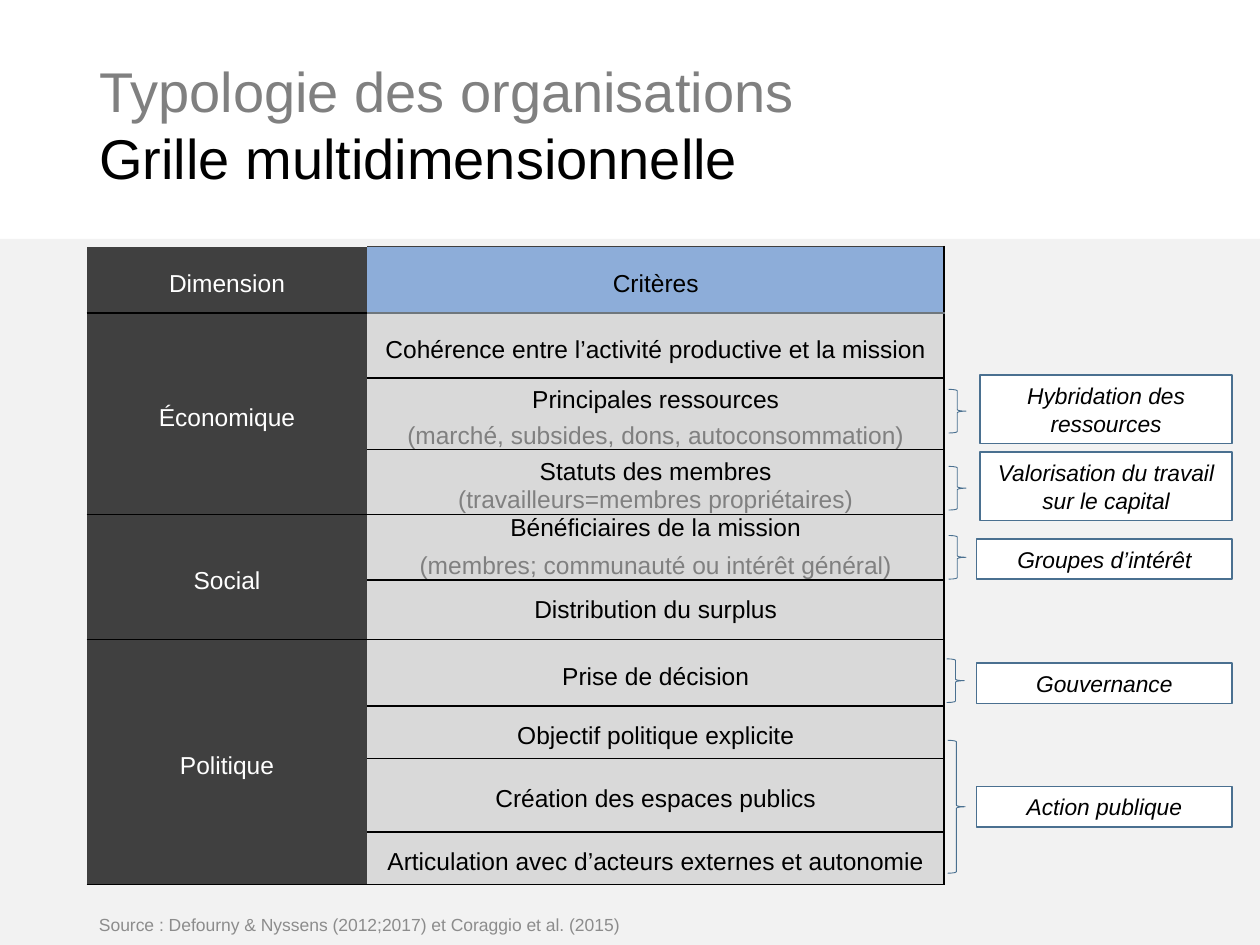
from dataclasses import dataclass

from lxml import etree
from pptx import Presentation
from pptx.dml.color import RGBColor
from pptx.enum.shapes import MSO_SHAPE
from pptx.enum.text import MSO_ANCHOR, PP_ALIGN
from pptx.oxml.ns import qn
from pptx.util import Pt


@dataclass(frozen=True)
class Theme:
    font: str = "Arial"
    black: str = "000000"
    white: str = "FFFFFF"
    muted: str = "808080"
    source: str = "8C8C8C"
    panel: str = "F2F2F2"
    dark: str = "404040"
    header: str = "8DADD9"
    header_rule: str = "6F777D"
    criterion: str = "D9D9D9"
    accent: str = "4A7090"
    title_size: float = 32
    table_size: float = 14
    label_size: float = 13
    source_size: float = 10


@dataclass(frozen=True)
class Box:
    left: float
    top: float
    width: float
    height: float

    def points(self):
        return Pt(self.left), Pt(self.top), Pt(self.width), Pt(self.height)


@dataclass(frozen=True)
class Criterion:
    text: str
    height: float
    spacing: float = 1.3
    detail: str = ""
    detail_spacing: float = 1.0
    detail_gap: float = 0


THEME = Theme()
HEADER_HEIGHT = 38
DIMENSIONS = {
    "Économique": [
        Criterion("Cohérence entre l’activité productive et la mission", 37),
        Criterion("Principales ressources", 41, detail_spacing=1.3,
                  detail="(marché, subsides, dons, autoconsommation)"),
        Criterion("Statuts des membres", 37,
                  detail="(travailleurs=membres propriétaires)"),
    ],
    "Social": [
        Criterion("Bénéficiaires de la mission", 37, 1.0, detail_gap=6,
                  detail="(membres; communauté ou intérêt général)"),
        Criterion("Distribution du surplus", 34, 1.0),
    ],
    "Politique": [
        Criterion("Prise de décision", 38),
        Criterion("Objectif politique explicite", 30),
        Criterion("Création des espaces publics", 42),
        Criterion("Articulation avec d’acteurs externes et autonomie", 30),
    ],
}
# Label, label box, brace box
CONCEPTS = [
    ("Hybridation des ressources", Box(560, 214.5, 144, 39), Box(542, 222.5, 10, 25)),
    ("Valorisation du travail sur le capital", Box(560, 258.5, 144, 39), Box(542, 266.5, 10, 25)),
    ("Groupes d’intérêt", Box(558, 308, 146, 23), Box(542, 306, 10, 25)),
    ("Gouvernance", Box(558, 379, 146, 23), Box(541, 376.5, 10, 25)),
    ("Action publique", Box(558, 449.5, 146, 23), Box(541.5, 423, 10, 76)),
]


def rgb(color):
    return RGBColor.from_string(color)


def style_font(font, size, color, italic=False):
    font.name = THEME.font
    font.size = Pt(size)
    font.color.rgb = rgb(color)
    font.italic = italic


def add_panel(page, box):
    panel = page.shapes.add_shape(MSO_SHAPE.RECTANGLE, *box.points())
    panel.shadow.inherit = False
    panel.fill.solid()
    panel.fill.fore_color.rgb = rgb(THEME.panel)
    panel.line.fill.background()


def place_title(page, box, topic, heading):
    title = page.shapes.title
    title.left, title.top, title.width, title.height = box.points()
    frame = title.text_frame
    frame.vertical_anchor = MSO_ANCHOR.MIDDLE
    para = frame.paragraphs[0]
    para.alignment = PP_ALIGN.LEFT
    for text, color in ((topic, THEME.muted), (heading, THEME.black)):
        if para.runs:
            para.add_line_break()
        span = para.add_run()
        span.text = text
        style_font(span.font, THEME.title_size, color)


def set_borders(cell, **edges):
    """Draw the named edges (L, R, T, B) in their colours and clear the others."""
    properties = cell._tc.get_or_add_tcPr()
    for index, edge in enumerate("LRTB"):
        line = etree.Element(qn(f"a:ln{edge}"), w=str(Pt(1)))
        if edges.get(edge):
            fill = etree.SubElement(line, qn("a:solidFill"))
            etree.SubElement(fill, qn("a:srgbClr"), val=edges[edge])
        else:
            etree.SubElement(line, qn("a:noFill"))
        properties.insert(index, line)


def paint_cell(cell, fill):
    cell.fill.solid()
    cell.fill.fore_color.rgb = rgb(fill)
    cell.vertical_anchor = MSO_ANCHOR.MIDDLE
    cell.margin_left = cell.margin_right = Pt(3)
    cell.margin_top = cell.margin_bottom = 0


def write_cell_line(para, text, color, spacing=1.3, gap=0):
    para.text = text
    para.alignment = PP_ALIGN.CENTER
    para.line_spacing = spacing
    if gap:
        para.space_before = Pt(gap)
    style_font(para.font, THEME.table_size, color)


def fill_criterion(cell, criterion, top_rule):
    paint_cell(cell, THEME.criterion)
    set_borders(cell, T=top_rule, R=THEME.black, B=THEME.black)
    frame = cell.text_frame
    write_cell_line(frame.paragraphs[0], criterion.text, THEME.black, criterion.spacing)
    if criterion.detail:
        write_cell_line(frame.add_paragraph(), criterion.detail, THEME.muted,
                        criterion.detail_spacing, criterion.detail_gap)


def add_grid(page, box, first_width):
    criteria = [item for group in DIMENSIONS.values() for item in group]
    grid = page.shapes.add_table(len(criteria) + 1, 2, *box.points()).table
    grid.columns[0].width = Pt(first_width)
    grid.columns[1].width = Pt(box.width - first_width)
    heights = [HEADER_HEIGHT] + [item.height for item in criteria]
    for row, height in zip(grid.rows, heights):
        row.height = Pt(height)

    for column, (text, fill, color) in enumerate((
            ("Dimension", THEME.dark, THEME.white),
            ("Critères", THEME.header, THEME.black))):
        cell = grid.cell(0, column)
        paint_cell(cell, fill)
        write_cell_line(cell.text_frame.paragraphs[0], text, color)
    set_borders(grid.cell(0, 0), B=THEME.black)
    set_borders(grid.cell(0, 1), T=THEME.dark, R=THEME.black, B=THEME.header_rule)

    first = 1
    for dimension, group in DIMENSIONS.items():
        last = first + len(group) - 1
        for row, criterion in enumerate(group, first):
            paint_cell(grid.cell(row, 0), THEME.dark)
            set_borders(grid.cell(row, 0),
                        T=THEME.black if row == first else None,
                        B=THEME.black if row in (first, last) else None)
            fill_criterion(grid.cell(row, 1), criterion,
                           THEME.header_rule if row == 1 else THEME.black)
        head = grid.cell(first, 0)
        head.merge(grid.cell(last, 0))
        write_cell_line(head.text_frame.paragraphs[0], dimension, THEME.white)
        first = last + 1


def add_concept(page, text, label_box, brace_box):
    label = page.shapes.add_shape(MSO_SHAPE.RECTANGLE, *label_box.points())
    label.fill.solid()
    label.fill.fore_color.rgb = rgb(THEME.white)
    brace = page.shapes.add_shape(MSO_SHAPE.RIGHT_BRACE, *brace_box.points())
    brace.fill.background()
    for shape, weight in ((label, 1), (brace, 0.5)):
        shape.shadow.inherit = False
        shape.line.color.rgb = rgb(THEME.accent)
        shape.line.width = Pt(weight)
    frame = label.text_frame
    frame.word_wrap = True
    frame.vertical_anchor = MSO_ANCHOR.MIDDLE
    para = frame.paragraphs[0]
    para.text = text
    para.alignment = PP_ALIGN.CENTER
    style_font(para.font, THEME.label_size, THEME.black, italic=True)


def add_source(page, box, text):
    frame = page.shapes.add_textbox(*box.points()).text_frame
    frame.word_wrap = True
    frame.vertical_anchor = MSO_ANCHOR.MIDDLE
    para = frame.paragraphs[0]
    para.text = text
    style_font(para.font, THEME.source_size, THEME.source)


def main():
    deck = Presentation()
    deck.slide_width, deck.slide_height = Pt(720), Pt(540)
    page = deck.slides.add_slide(deck.slide_layouts[5])
    add_panel(page, Box(0, 136.5, 720, 403.5))
    place_title(page, Box(49.5, 29, 621, 83),
                "Typologie des organisations", "Grille multidimensionnelle")
    add_grid(page, Box(49.5, 141, 490, 364), 160.5)
    for concept in CONCEPTS:
        add_concept(page, *concept)
    add_source(page, Box(49.5, 520, 490, 17),
               "Source : Defourny & Nyssens (2012;2017) et Coraggio et al. (2015)")
    deck.save("out.pptx")


if __name__ == "__main__":
    main()
